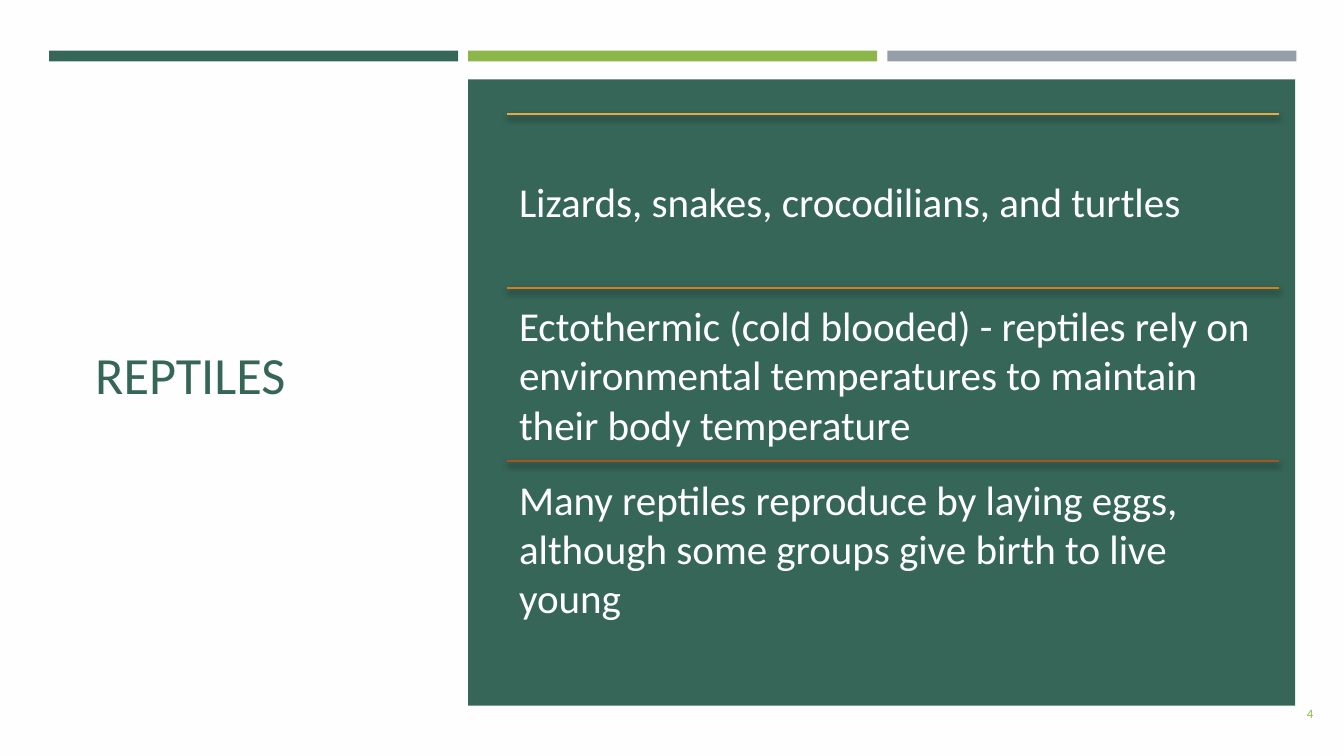
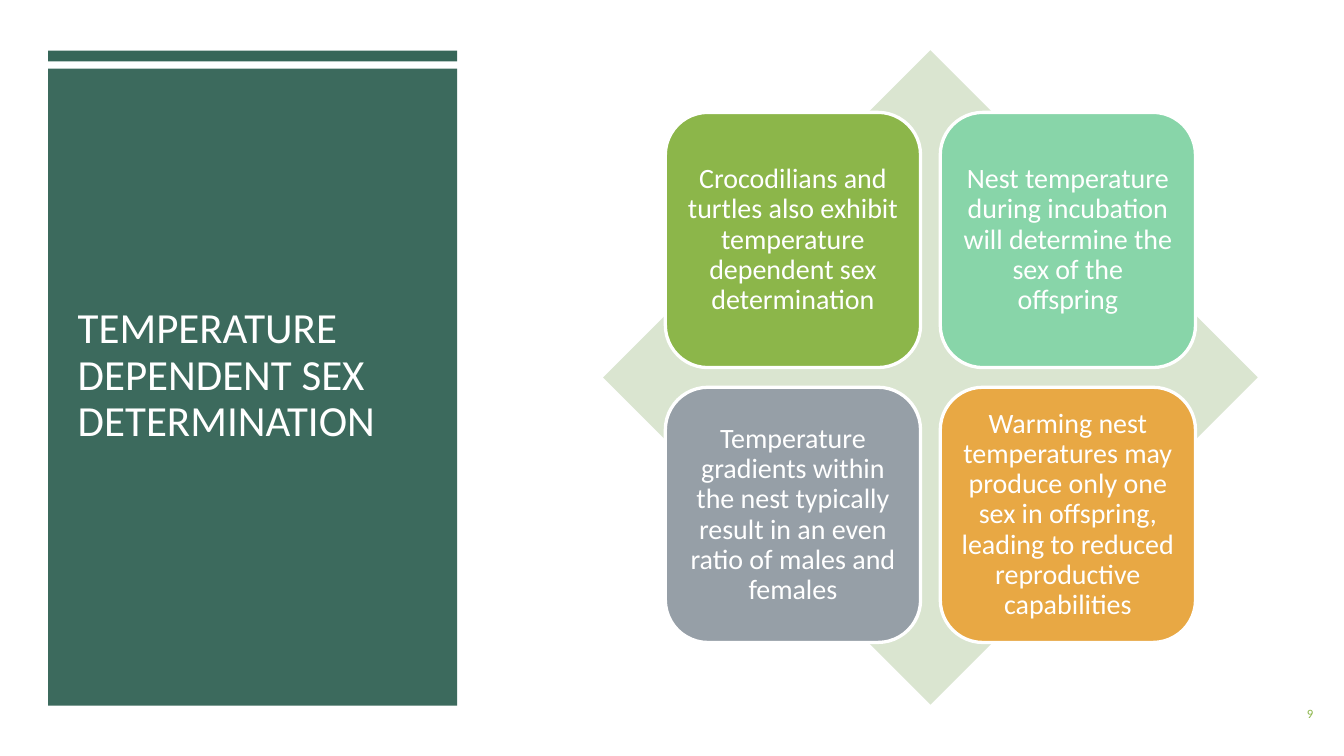
from dataclasses import dataclass

from lxml.etree import SubElement
from pptx import Presentation
from pptx.dml.color import RGBColor
from pptx.enum.shapes import MSO_CONNECTOR, MSO_SHAPE
from pptx.enum.text import MSO_ANCHOR, PP_ALIGN
from pptx.oxml.ns import qn
from pptx.util import Cm, Pt


@dataclass(frozen=True)
class Theme:
    font: str = "Calibri"
    white: str = "FFFFFF"
    paper: str = "FFFEFF"
    pine: str = "366658"
    leaf: str = "8CB64A"
    slate: str = "969FA7"
    mint: str = "88D5A9"
    amber: str = "E8A844"
    orange: str = "D57E21"
    rust: str = "A1561F"
    pale: str = "DAE5D0"
    shade: str = "000000"
    title_size: float = 28
    side_title_size: float = 23
    fact_size: float = 22
    tile_size: float = 15
    number_size: float = 6.8


THEME = Theme()

REPTILES = {
    "title": "REPTILES",
    "number": "4",
    "facts": [
        ("Lizards, snakes, crocodilians, and turtles", THEME.amber),
        ("Ectothermic (cold blooded) - reptiles rely on environmental "
         "temperatures to maintain their body temperature", THEME.orange),
        ("Many reptiles reproduce by laying eggs, although some groups give "
         "birth to live young", THEME.rust),
    ],
}

SEX_DETERMINATION = {
    "title": "TEMPERATURE DEPENDENT SEX DETERMINATION",
    "number": "9",
    "tiles": [
        ("Crocodilians and turtles also exhibit temperature dependent sex "
         "determination", THEME.leaf),
        ("Nest temperature during incubation will determine the sex of the "
         "offspring", THEME.mint),
        ("Temperature gradients within the nest typically result in an even "
         "ratio of males and females", THEME.slate),
        ("Warming nest temperatures may produce only one sex in offspring, "
         "leading to reduced reproductive capabilities", THEME.amber),
    ],
}

# Lengths in centimetres
SLIDE_W, SLIDE_H = 25.4, 14.29
BAND_TOP, BAND_W, BAND_H, BAND_STEP = 0.96, 7.73, 0.2, 7.92
BANDS_LEFT, SIDE_LEFT = 0.93, 0.91
FACT_LEFT, FACT_TOP, FACT_W, FACT_H = 9.58, 2.16, 14.6, 3.28
DIAMOND_LEFT, DIAMOND_TOP, DIAMOND_SIDE = 11.4, 0.95, 12.37
# Tile size and offsets as shares of the diamond's side
TILE_SHARE, TILE_OFFSETS = 0.39, (0.095, 0.515)


def rgb(color):
    return RGBColor.from_string(color)


def box(values):
    return [Cm(value) for value in values]


def write(holder, text, size, color, anchor=MSO_ANCHOR.MIDDLE,
          align=PP_ALIGN.LEFT, spacing=1.0, insets=(0.25, 0.13)):
    """Fill a shape with one run; insets are (sides, top and bottom)."""
    frame = holder.text_frame
    frame.word_wrap = True
    frame.vertical_anchor = anchor
    frame.margin_left = frame.margin_right = Cm(insets[0])
    frame.margin_top = frame.margin_bottom = Cm(insets[1])
    paragraph = frame.paragraphs[0]
    paragraph.alignment = align
    paragraph.line_spacing = spacing
    run = paragraph.add_run()
    run.text = text
    run.font.name = THEME.font
    run.font.size = Pt(size)
    run.font.color.rgb = rgb(color)


def add_text(slide, area, *args, **kwargs):
    write(slide.shapes.add_textbox(*box(area)), *args, **kwargs)


def add_block(slide, area, fill, kind=MSO_SHAPE.RECTANGLE):
    block = slide.shapes.add_shape(kind, *box(area))
    block.shadow.inherit = False
    block.fill.solid()
    block.fill.fore_color.rgb = rgb(fill)
    block.line.fill.background()
    return block


def add_alpha(color_element, percent):
    SubElement(color_element, qn("a:alpha"), val=str(percent * 1000))


def add_rule(slide, left, top, width, color):
    """Draw a thin horizontal line with a soft shadow below it."""
    rule = slide.shapes.add_connector(
        MSO_CONNECTOR.STRAIGHT, *box((left, top, left + width, top)))
    rule.line.color.rgb = rgb(color)
    rule.line.width = Pt(1)
    effects = SubElement(rule._element.spPr, qn("a:effectLst"))
    shadow = SubElement(effects, qn("a:outerShdw"), blurRad=str(Pt(3)),
                        dist=str(Pt(2)), dir="5400000", rotWithShape="0")
    add_alpha(SubElement(shadow, qn("a:srgbClr"), val=THEME.shade), 55)


def add_band(slide, left, color):
    add_block(slide, (left, BAND_TOP, BAND_W, BAND_H), color)


def start_slide(deck, background):
    slide = deck.slides.add_slide(deck.slide_layouts[6])
    slide.background.fill.solid()
    slide.background.fill.fore_color.rgb = rgb(background)
    return slide


def add_page_number(slide, number):
    add_text(slide, (23.55, 12.95, 1.52, 1.09), number, THEME.number_size,
             THEME.leaf, align=PP_ALIGN.RIGHT, insets=(0.25, 0.25))


def build_reptiles(deck, content):
    slide = start_slide(deck, THEME.paper)
    add_text(slide, (1.55, 2.16, 6.35, 9.8), content["title"],
             THEME.title_size, THEME.pine)
    for column, color in enumerate((THEME.pine, THEME.leaf, THEME.slate)):
        add_band(slide, BANDS_LEFT + column * BAND_STEP, color)
    add_block(slide, (BANDS_LEFT + BAND_STEP, 1.5, 15.63, 11.84), THEME.pine)
    for row, (fact, color) in enumerate(content["facts"]):
        top = FACT_TOP + row * FACT_H
        add_rule(slide, FACT_LEFT, top, FACT_W, color)
        add_text(slide, (FACT_LEFT, top, FACT_W, FACT_H), fact,
                 THEME.fact_size, THEME.white, insets=(0.23, 0.23))
    add_page_number(slide, content["number"])


def build_sex_determination(deck, content):
    slide = start_slide(deck, THEME.white)
    panel = add_block(slide, (SIDE_LEFT, 1.3, BAND_W, 12.04), THEME.pine)
    add_alpha(panel._element.spPr.find(qn("a:solidFill"))[0], 97)
    add_band(slide, SIDE_LEFT, THEME.pine)
    add_text(slide, (1.22, 2.36, 7.11, 6.2), content["title"],
             THEME.side_title_size, THEME.white, anchor=MSO_ANCHOR.BOTTOM,
             spacing=0.9)
    add_block(slide, (DIAMOND_LEFT, DIAMOND_TOP, DIAMOND_SIDE, DIAMOND_SIDE),
              THEME.pale, MSO_SHAPE.DIAMOND)
    side = TILE_SHARE * DIAMOND_SIDE
    for index, (statement, color) in enumerate(content["tiles"]):
        row, column = divmod(index, 2)
        left = DIAMOND_LEFT + TILE_OFFSETS[column] * DIAMOND_SIDE
        top = DIAMOND_TOP + TILE_OFFSETS[row] * DIAMOND_SIDE
        tile = add_block(slide, (left, top, side, side), color,
                         MSO_SHAPE.ROUNDED_RECTANGLE)
        tile.line.color.rgb = rgb(THEME.white)
        tile.line.width = Pt(1.75)
        write(tile, statement, THEME.tile_size, THEME.white,
              align=PP_ALIGN.CENTER, spacing=0.9, insets=(0.15, 0.15))
    add_page_number(slide, content["number"])


def main():
    deck = Presentation()
    deck.slide_width, deck.slide_height = Cm(SLIDE_W), Cm(SLIDE_H)
    build_reptiles(deck, REPTILES)
    build_sex_determination(deck, SEX_DETERMINATION)
    deck.save("out.pptx")


if __name__ == "__main__":
    main()
